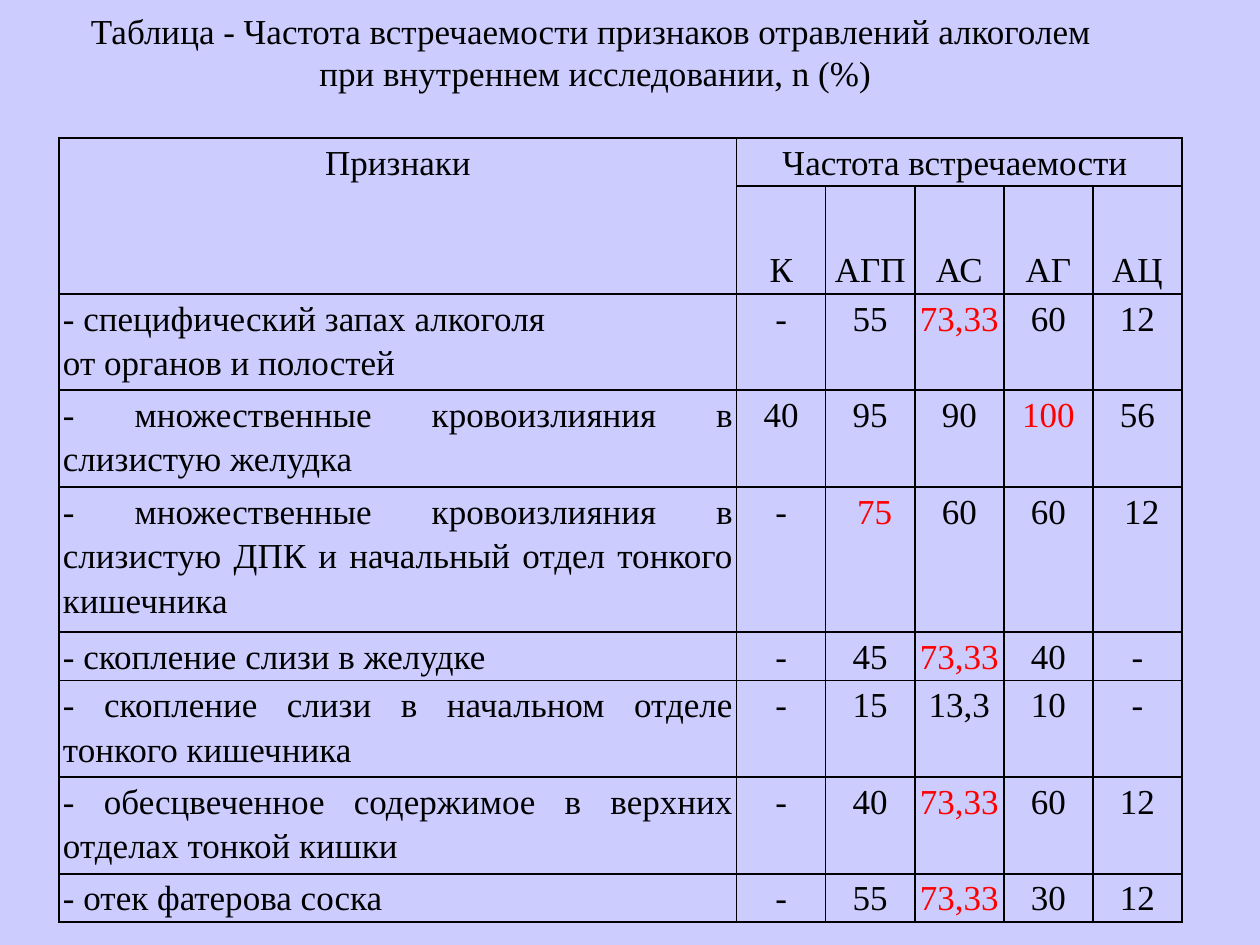
from dataclasses import dataclass

from lxml.etree import SubElement
from pptx import Presentation
from pptx.dml.color import RGBColor as RGB
from pptx.enum.text import MSO_ANCHOR as Anchor, MSO_AUTO_SIZE as AutoSize, PP_ALIGN as Align
from pptx.oxml.ns import qn
from pptx.util import Pt


@dataclass(frozen=True)
class Theme:
    bg: RGB = RGB(0xCC, 0xCC, 0xFF)
    text: RGB = RGB(0, 0, 0)
    accent: RGB = RGB(0xFF, 0, 0)
    border: str = "000000"
    font: str = "Times New Roman"
    size: int = 20


theme = Theme()


def style(p, align, color=theme.text):
    p.alignment = align
    for r in p.runs:
        r.font.name = theme.font
        r.font.size = Pt(theme.size)
        r.font.bold = False
        r.font.color.rgb = color


def add_borders(cell):
    tcPr = cell._tc.get_or_add_tcPr()
    for i, side in enumerate(("a:lnL", "a:lnR", "a:lnT", "a:lnB")):
        ln = tcPr.makeelement(qn(side), {"w": str(Pt(1))})
        fill = SubElement(ln, qn("a:solidFill"))
        SubElement(fill, qn("a:srgbClr"), val=theme.border)
        tcPr.insert(i, ln)


prs = Presentation()
prs.slide_width, prs.slide_height = Pt(720), Pt(540)
s = prs.slides.add_slide(prs.slide_layouts[5])
s.background.fill.solid()
s.background.fill.fore_color.rgb = theme.bg

title = s.shapes.title
title.left, title.top, title.width, title.height = Pt(0), Pt(0), Pt(680.4), Pt(77.8)
tf = title.text_frame
tf.text = "Таблица - Частота встречаемости признаков отравлений алкоголем \nпри внутреннем исследовании, n (%)"
tf.word_wrap = True
tf.auto_size = AutoSize.NONE
tf.vertical_anchor = Anchor.TOP
tf.margin_top = Pt(5.4)
for p in tf.paragraphs:
    style(p, Align.CENTER)

rows = [
    ("Признаки", "Частота встречаемости ", "", "", "", ""),
    ("", "К", "АГП", "АС", "АГ", "АЦ"),
    ("- специфический запах алкоголя\nот органов и полостей", "-", "55", "73,33", "60", "12"),
    ("- множественные кровоизлияния в слизистую желудка", "40", "95", "90", "100", "56"),
    ("- множественные кровоизлияния в слизистую ДПК и начальный отдел тонкого кишечника",
     "-", " 75", "60", "60", " 12"),
    ("- скопление слизи в желудке", "-", "45", "73,33", "40", "-"),
    ("- скопление слизи в начальном отделе тонкого кишечника", "-", "15", "13,3", "10", "-"),
    ("- обесцвеченное содержимое в верхних отделах тонкой кишки", "-", "40", "73,33", "60", "12"),
    ("- отек фатерова соска", "-", "55", "73,33", "30", "12"),
]
highlights = {(2, 3), (3, 4), (4, 2), (5, 3), (7, 3), (8, 3)}
col_widths = [387.2] + [50.9] * 5
row_heights = [27.5, 61.7, 55, 55.3, 83, 27.7, 55.2, 55.2, 27.5]

table = s.shapes.add_table(len(rows), len(col_widths), Pt(33.8), Pt(78.8),
                           Pt(sum(col_widths)), Pt(sum(row_heights))).table
table.first_row = False
table.horz_banding = False
for col, width in zip(table.columns, col_widths):
    col.width = Pt(width)
for row, height in zip(table.rows, row_heights):
    row.height = Pt(height)
table.cell(0, 0).merge(table.cell(1, 0))
table.cell(0, 1).merge(table.cell(0, 5))

for i, values in enumerate(rows):
    for j, value in enumerate(values):
        cell = table.cell(i, j)
        cell.fill.background()
        add_borders(cell)
        cell.margin_left = cell.margin_right = Pt(2.2)
        cell.margin_top = cell.margin_bottom = Pt(0)
        if cell.is_spanned:
            continue
        cell.text_frame.text = value
        if i == 1:
            cell.vertical_anchor = Anchor.BOTTOM
            cell.margin_bottom = Pt(2)
        align = Align.JUSTIFY if i > 1 and j == 0 else Align.CENTER
        color = theme.accent if (i, j) in highlights else theme.text
        for p in cell.text_frame.paragraphs:
            p.line_spacing = 1.15
            style(p, align, color)

prs.save("out.pptx")
